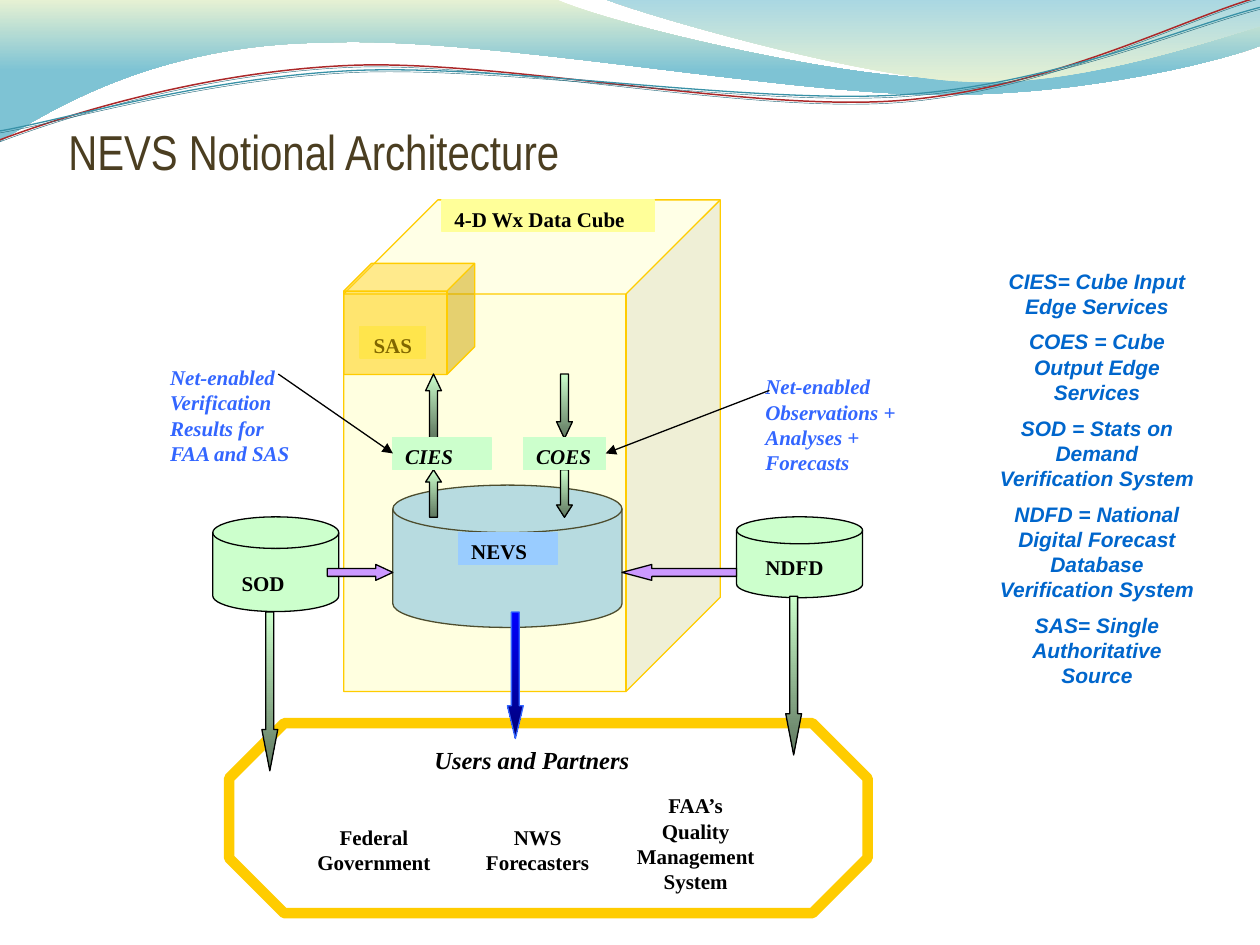
from lxml import etree
from pptx import Presentation
from pptx import util as u
from pptx.dml.color import RGBColor
from pptx.enum import shapes, text
from pptx.oxml.ns import qn

SERIF = "Times New Roman"
LEFT, CENTER = text.PP_ALIGN.LEFT, text.PP_ALIGN.CENTER
KIND = shapes.MSO_SHAPE
GREEN, YELLOW, GOLD, BLACK, WHITE = "CCFFCC", "FFFF99", "FFCC00", "000000", "FFFFFF"


def rgb(value):
    return RGBColor.from_string(value)


def paint(sp, fill=None, line=None, width=0.75, alpha=None):
    """Fill may be None, one colour, or (start, end, end position, angle)."""
    sp.shadow.inherit = False
    if fill is None:
        sp.fill.background()
    elif isinstance(fill, tuple):
        start, end, position, angle = fill
        sp.fill.gradient()
        sp.fill.gradient_angle = angle
        first, last = sp.fill.gradient_stops
        first.color.rgb, last.color.rgb = rgb(start), rgb(end)
        first.position, last.position = 0, position
    else:
        sp.fill.solid()
        sp.fill.fore_color.rgb = rgb(fill)
        if alpha:
            clr = sp.fill._xPr.find(qn("a:solidFill"))[0]
            etree.SubElement(clr, qn("a:alpha")).set("val", str(alpha * 1000))
    if line:
        sp.line.color.rgb = rgb(line)
        sp.line.width = u.Pt(width)
    else:
        sp.line.fill.background()


def write(sp, lines, size=12, color=BLACK, font=SERIF, bold=True, italic=False,
          align=LEFT, gap=0):
    tf = sp.text_frame
    tf.word_wrap = True
    tf.vertical_anchor = text.MSO_ANCHOR.TOP
    tf.text = "\n".join(lines)
    for i, p in enumerate(tf.paragraphs):
        p.alignment = align
        if i and gap:
            p.space_before = u.Pt(gap)
        for r in p.runs:
            f = r.font
            f.name, f.size, f.bold, f.italic = font, u.Pt(size), bold, italic
            f.color.rgb = rgb(color)
    return tf


def add_shape(s, kind, box, fill, line=None, **look):
    sp = s.shapes.add_shape(kind, *(u.Cm(v) for v in box))
    paint(sp, fill, line, **look)
    return sp


def add_label(s, words, box, fill=WHITE, **style):
    sp = add_shape(s, KIND.RECTANGLE, box, fill, fill)
    return write(sp, [words], **style)


def add_text(s, lines, box, **style):
    return write(s.shapes.add_textbox(*(u.Cm(v) for v in box)), lines, **style)


def add_arrow(s, kind, box, fill, line=BLACK):
    sp = add_shape(s, kind, box, fill, line)
    short, long = sorted(box[2:])
    sp.adjustments[1] = 0.26 * long / short


def add_pointer(s, start, end):
    c = s.shapes.add_connector(shapes.MSO_CONNECTOR.STRAIGHT,
                               *(u.Cm(v) for v in start + end))
    c.line.color.rgb = rgb(BLACK)
    c.line.width = u.Pt(0.75)
    etree.SubElement(c.line._get_or_add_ln(), qn("a:tailEnd")).set("type", "triangle")
    etree.SubElement(c._element.spPr, qn("a:effectLst"))


def add_wave(s, start, steps, closed=False, dy=0, **look):
    """Each step is a straight line (x, y) or a Bezier curve of six numbers."""
    points = [start] + [step[i:i + 2] for step in steps for i in range(0, len(step), 2)]
    emu = [(u.Cm(x), u.Cm(y + dy)) for x, y in points]
    builder = s.shapes.build_freeform(*emu[0])
    builder.add_line_segments(emu[1:], close=closed)
    sp = builder.convert_to_shape()
    # Join the three segments of each curve into one Bezier element
    segments = iter(list(sp._element.iter(qn("a:lnTo"))))
    for step in steps:
        first = next(segments)
        if len(step) == 6:
            first.tag = qn("a:cubicBezTo")
            for _ in range(2):
                other = next(segments)
                first.append(other[0])
                other.getparent().remove(other)
    paint(sp, **look)


def add_header(s):
    add_wave(s, (0, -0.03), [
        (11.18, -0.03), (12.09, 0.43, 16.87, 1.6, 19.25, 1.6),
        (21.79, 1.6, 24.33, 0.66, 25.4, 0.23), (25.43, 0.91),
        (24.97, 1.12, 22.1, 1.93, 18.95, 1.91), (15.8, 1.91, 9.7, 0.71, 6.53, 0.86),
        (3.28, 0.89, 1.17, 2.11, -0.03, 2.87),
    ], closed=True, fill=("E8F2D3", "7EC3D4", 0.5, 270))
    add_wave(s, (12.17, -0.03), [
        (12.93, 0.28, 17.32, 1.57, 19.53, 1.65),
        (21.74, 1.75, 24.41, 0.81, 25.4, 0.53), (25.4, 0),
    ], closed=True, fill=("E8F2D3", "A9D7E2", 1, 90))
    upper = (0, 2.82), [(1.22, 2.36, 4.01, 1.45, 7.04, 1.32),
                        (10.03, 1.19, 15.06, 2.26, 18.11, 2.03),
                        (21.16, 1.8, 23.83, 0.38, 25.35, -0.05)]
    lower = (0, 2.64), [(1.19, 2.44, 4.17, 1.55, 7.19, 1.42),
                        (10.24, 1.3, 15.16, 2.11, 18.21, 1.91),
                        (21.23, 1.7, 23.9, 0.53, 25.4, 0.15)]
    for curve, color, width in ((upper, "AC2829", 0.85), (lower, "3891A7", 0.75)):
        add_wave(s, *curve, line=color, width=width)
        add_wave(s, *curve, dy=0.04, line="2A6D7D", width=0.25)


def add_title_and_legend(s):
    tf = add_text(s, ["NEVS Notional Architecture"], (-0.43, 2.36, 25.83, 1.27), size=28,
                  color="4B3E21", font="Arial Narrow", bold=False)
    tf.vertical_anchor = text.MSO_ANCHOR.BOTTOM
    tf.margin_left = u.Cm(1.81)
    tf.margin_top = tf.margin_bottom = 0
    add_text(s, ["CIES= Cube Input Edge Services",
                 "COES = Cube Output Edge Services",
                 "SOD = Stats on Demand Verification System",
                 "NDFD = National Digital Forecast Database Verification System",
                 "SAS= Single Authoritative Source"],
             (19.89, 5.28, 4.45, 8.89), color="0066CC", font="Arial", italic=True,
             align=CENTER, gap=6)


def add_stores(s):
    for box, fill in (((7.92, 9.78, 4.62, 2.87), "99CCFF"),
                      ((4.29, 10.42, 2.54, 1.91), GREEN),
                      ((14.85, 10.42, 2.54, 1.63), GREEN)):
        add_shape(s, KIND.FLOWCHART_MAGNETIC_DISK, box, fill, BLACK)
    # The translucent cube lies over the NEVS store
    add_shape(s, KIND.CUBE, (6.93, 4.03, 7.59, 9.91), YELLOW, GOLD, alpha=30)
    add_label(s, "4-D Wx Data Cube", (8.91, 4.03, 4.29, 0.64), YELLOW)
    add_label(s, "NEVS", (9.25, 10.74, 1.98, 0.64), "99CCFF")
    add_label(s, "SOD", (4.62, 11.38, 1.98, 0.64), GREEN)
    add_label(s, "NDFD", (15.18, 11.06, 1.98, 0.64), GREEN)


def add_users(s):
    sp = add_shape(s, KIND.OCTAGON, (4.62, 14.58, 12.87, 3.83), WHITE, GOLD, width=6)
    sp.adjustments[0] = 0.29
    add_label(s, "Users and Partners", (8.25, 14.89, 4.95, 0.97), size=14,
              italic=True, align=CENTER)
    for words, box in (("Federal Government", (5.89, 16.49, 3.3, 1.27)),
                       ("NWS Forecasters", (9.24, 16.49, 3.2, 1.27)),
                       ("FAA’s Quality Management System", (12.54, 15.86, 2.97, 2.24))):
        add_label(s, words, box, align=CENTER)


def add_sas(s):
    add_label(s, "SAS", (7.26, 6.58, 1.32, 0.64), YELLOW, align=CENTER)
    add_shape(s, KIND.CUBE, (6.93, 5.31, 2.64, 2.24), GOLD, GOLD, alpha=50)


def add_flows(s):
    # Callouts
    note = dict(color="3366FF", italic=True)
    add_label(s, "Net-enabled Observations + Analyses + Forecasts",
              (15.18, 6.91, 3.63, 3.2), **note).margin_top = u.Cm(0.63)
    add_label(s, "Net-enabled Verification Results for FAA and SAS",
              (3.18, 7.23, 3.1, 2.57), **note)
    # Vertical arrows
    thick = 0.32
    green, blue = (GREEN, "5E765E", 1, 270), ("0000FF", "000076", 1, 270)
    add_arrow(s, KIND.DOWN_ARROW, (10.23, 12.34, thick, 2.55), blue, "3366FF")
    for x, y in ((5.28, 12.34), (15.84, 12.02)):
        add_arrow(s, KIND.DOWN_ARROW, (x, y, thick, 3.2), green)
    for y, length in ((7.54, 1.3), (9.47, 0.96)):
        add_arrow(s, KIND.UP_ARROW, (8.58, y, thick, length), green)
        add_arrow(s, KIND.DOWN_ARROW, (11.22, y, thick, length), green)
    # Edge services and their pointers
    add_label(s, "COES", (10.56, 8.82, 1.65, 0.64), GREEN, italic=True)
    add_label(s, "CIES", (7.92, 8.82, 1.98, 0.64), GREEN, italic=True)
    add_pointer(s, (15.51, 7.87), (12.21, 9.14))
    add_pointer(s, (5.61, 7.54), (7.92, 9.14))
    # Horizontal arrows into NEVS
    add_arrow(s, KIND.RIGHT_ARROW, (6.6, 11.38, 1.32, thick), "CC99FF")
    add_arrow(s, KIND.LEFT_ARROW, (12.54, 11.38, 2.31, thick), "CC99FF")


def main():
    prs = Presentation()
    prs.slide_width, prs.slide_height = u.Cm(25.4), u.Cm(19.05)
    s = prs.slides.add_slide(prs.slide_layouts[6])
    add_header(s)
    add_title_and_legend(s)
    add_stores(s)
    add_users(s)
    add_sas(s)
    add_flows(s)
    prs.save("out.pptx")


if __name__ == "__main__":
    main()
